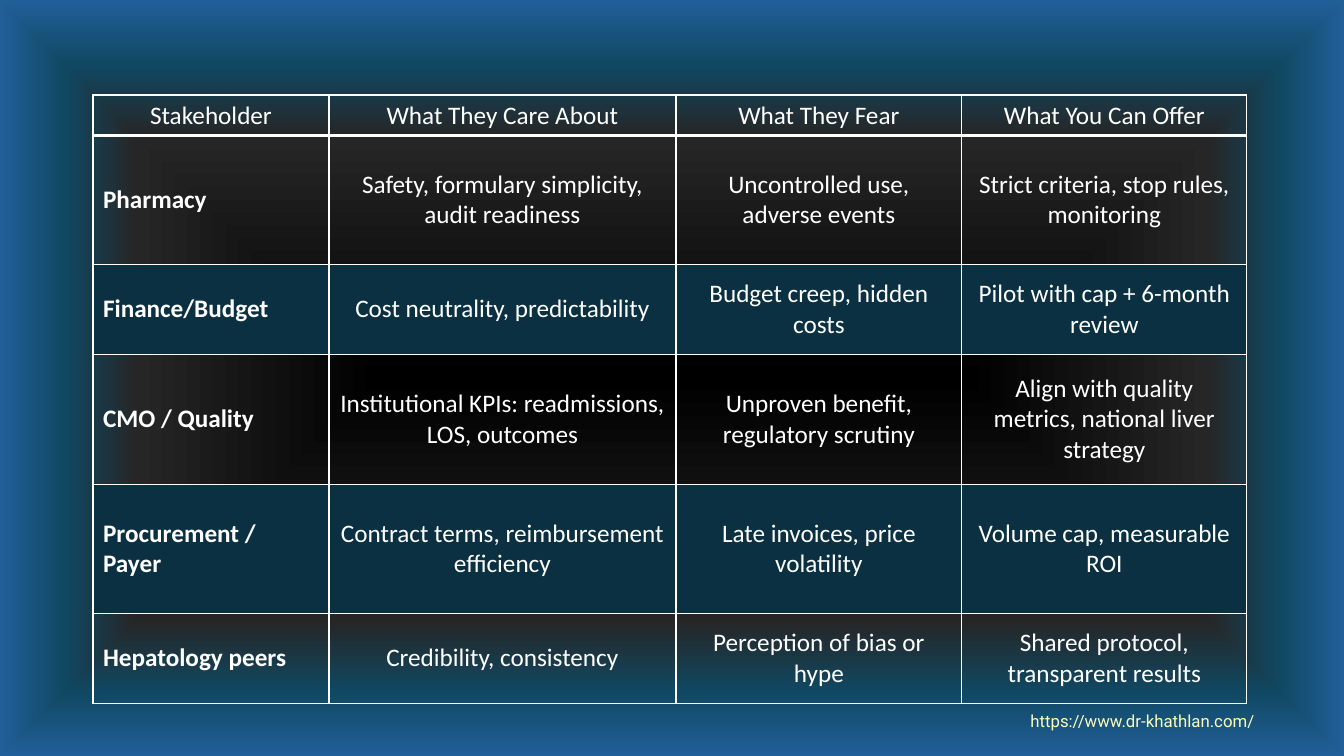
"""Build a slide with a stakeholder table on a dark blue gradient."""
from dataclasses import dataclass

from lxml.etree import SubElement
from pptx import Presentation
from pptx.dml.color import RGBColor
from pptx.enum.text import MSO_ANCHOR, MSO_AUTO_SIZE, PP_ALIGN
from pptx.oxml.ns import qn
from pptx.util import Emu, Pt


@dataclass(frozen=True)
class Theme:
    white: str = "FFFFFF"
    band: str = "0B3041"
    link: str = "FEFCBA"
    glow: tuple[tuple[int, str], ...] = (
        (0, "000000"), (64, "262626"), (83, "104862"), (100, "215F9A"))
    table_font: str = "Calibri"
    link_font: str = "Roboto"
    table_size: int = 18
    link_size: int = 12
    rule: int = 1
    header_rule: int = 3


@dataclass(frozen=True)
class Stakeholder:
    name: str
    cares: str
    fears: str
    offer: str
    height: int
    banded: bool = False

    def texts(self) -> tuple[str, ...]:
        return self.name, self.cares, self.fears, self.offer


THEME = Theme()
HEADER = Stakeholder("Stakeholder", "What They Care About", "What They Fear",
                     "What You Can Offer", 40)
STAKEHOLDERS = (
    Stakeholder("Pharmacy", "Safety, formulary simplicity, audit readiness",
                "Uncontrolled use, adverse events",
                "Strict criteria, stop rules, monitoring", 129),
    Stakeholder("Finance/Budget", "Cost neutrality, predictability",
                "Budget creep, hidden costs",
                "Pilot with cap + 6-month review", 90, True),
    Stakeholder("CMO / Quality", "Institutional KPIs: readmissions, LOS, outcomes",
                "Unproven benefit, regulatory scrutiny",
                "Align with quality metrics, national liver strategy", 130),
    Stakeholder("Procurement / Payer", "Contract terms, reimbursement efficiency",
                "Late invoices, price volatility",
                "Volume cap, measurable ROI", 129, True),
    Stakeholder("Hepatology peers", "Credibility, consistency",
                "Perception of bias or hype",
                "Shared protocol, transparent results", 90),
)
COLUMNS = (236, 347, 286, 285)


def px(n: int) -> Emu:
    return Emu(round(n * 914400 / 100.8))


def set_font(p, name: str, size: int, color: str, bold: bool = False) -> None:
    p.font.name = name
    p.font.size = Pt(size)
    p.font.bold = bold
    p.font.color.rgb = RGBColor.from_string(color)


def paint_background(s) -> None:
    s.background.fill.gradient()
    grad = s.background._cSld.find(".//" + qn("a:gradFill"))
    for child in list(grad):
        grad.remove(child)
    stops = SubElement(grad, qn("a:gsLst"))
    for pos, color in THEME.glow:
        stop = SubElement(stops, qn("a:gs"), pos=str(pos * 1000))
        SubElement(stop, qn("a:srgbClr"), val=color)
    shade = SubElement(grad, qn("a:path"), path="shape")
    SubElement(shade, qn("a:fillToRect"), {side: "50000" for side in "ltrb"})


def add_borders(cell, bottom: int) -> None:
    tc_pr = cell._tc.get_or_add_tcPr()
    for side in "LRTB":
        width = bottom if side == "B" else THEME.rule
        ln = SubElement(tc_pr, qn(f"a:ln{side}"), w=str(Pt(width)))
        fill = SubElement(ln, qn("a:solidFill"))
        SubElement(fill, qn("a:srgbClr"), val=THEME.white)


def fill_cell(cell, text: str, is_name: bool, is_header: bool, banded: bool) -> None:
    add_borders(cell, THEME.header_rule if is_header else THEME.rule)
    if banded:
        cell.fill.solid()
        cell.fill.fore_color.rgb = RGBColor.from_string(THEME.band)
    else:
        cell.fill.background()
    cell.vertical_anchor = MSO_ANCHOR.MIDDLE
    p = cell.text_frame.paragraphs[0]
    p.text = text
    p.alignment = PP_ALIGN.LEFT if is_name else PP_ALIGN.CENTER
    set_font(p, THEME.table_font, THEME.table_size, THEME.white, is_name)


def add_stakeholder_table(s) -> None:
    rows = (HEADER, *STAKEHOLDERS)
    table = s.shapes.add_table(
        len(rows), len(COLUMNS), px(93), px(95),
        px(sum(COLUMNS)), px(sum(row.height for row in rows))).table
    table.first_row = table.horz_banding = False
    for column, width in zip(table.columns, COLUMNS):
        column.width = px(width)
    for i, row in enumerate(rows):
        table.rows[i].height = px(row.height)
        for j, text in enumerate(row.texts()):
            fill_cell(table.cell(i, j), text, i > 0 and j == 0, i == 0, row.banded)


def add_link(s) -> None:
    tf = s.shapes.add_textbox(px(957), px(706), px(371), px(30)).text_frame
    tf.word_wrap = True
    tf.auto_size = MSO_AUTO_SIZE.SHAPE_TO_FIT_TEXT
    p = tf.paragraphs[0]
    p.text = "https://www.dr-khathlan.com/"
    p.alignment = PP_ALIGN.CENTER
    set_font(p, THEME.link_font, THEME.link_size, THEME.link)


def main() -> None:
    prs = Presentation()
    prs.slide_width, prs.slide_height = px(1344), px(756)
    s = prs.slides.add_slide(prs.slide_layouts[6])
    paint_background(s)
    add_link(s)
    add_stakeholder_table(s)
    prs.save("out.pptx")


if __name__ == "__main__":
    main()
